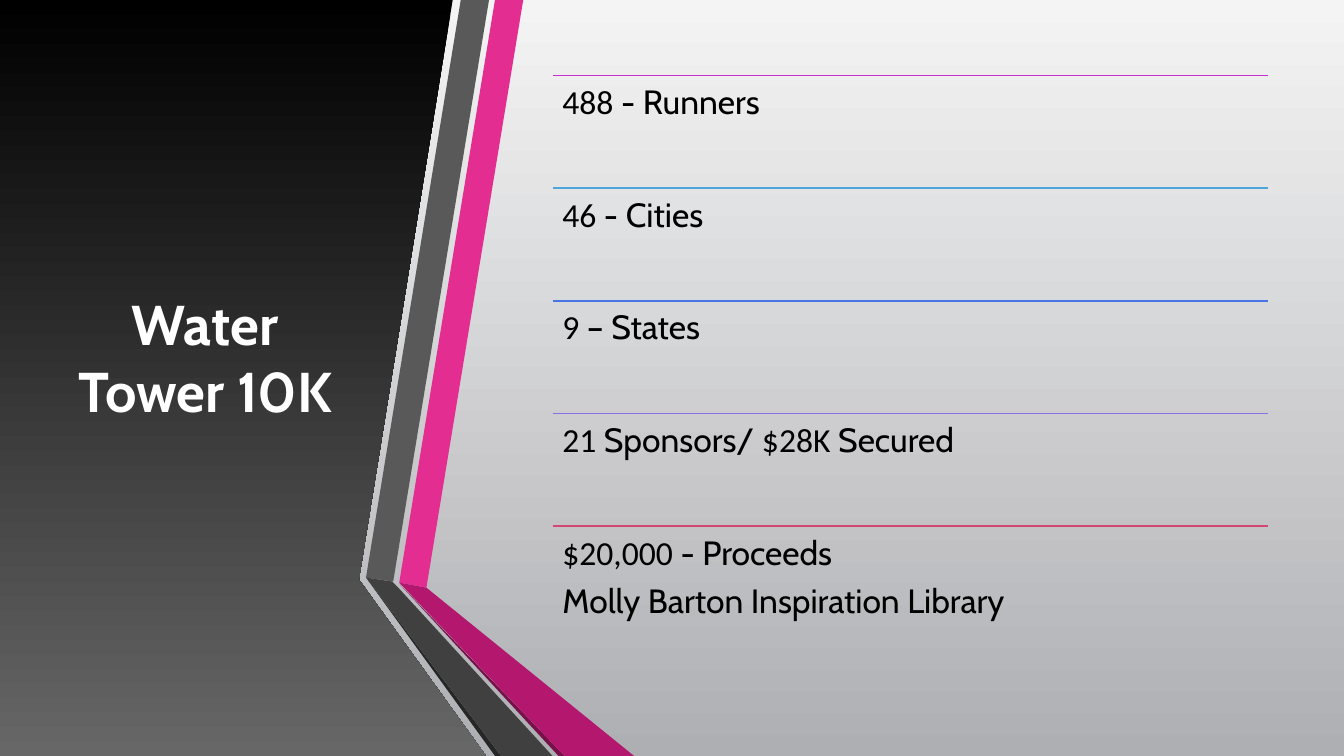
from lxml import etree
from pptx import Presentation
from pptx import util as u
from pptx.dml.color import RGBColor
from pptx.enum import shapes, text
from pptx.oxml.ns import qn


def paint(fill, *tones):
    if len(tones) == 1:
        fill.solid()
        fill.fore_color.rgb = RGBColor.from_string(tones[0])
        return
    fill.gradient()
    fill.gradient_angle = 270
    for stop, tone, place in zip(fill.gradient_stops, tones, (0, 1)):
        stop.color.rgb = RGBColor.from_string(tone)
        stop.position = place


def write(para, words, face, size, tone, bold=False):
    run = para.add_run()
    run.text = words
    form = {"name": face, "size": u.Pt(size), "bold": bold}
    for key, value in form.items():
        setattr(run.font, key, value)
    paint(run.font.fill, tone)


deck = Presentation()
deck.slide_width = u.Inches(13.33)
deck.slide_height = u.Inches(7.5)
slide = deck.slides.add_slide(deck.slide_layouts[6])
paint(slide.background.fill, "F4F4F5", "AEAFB2")

panel = [(0, 0), (4.49, 0), (3.56, 5.75), (4.82, 7.5), (0, 7.5)]
bands = [
    (panel, ["000000", "676767"]),
    ([(3.96, 5.78), (4.23, 5.83), (5.19, 0), (4.91, 0)], ["E32D91"]),
    ([(4.85, 0), (4.57, 0), (3.63, 5.73), (3.9, 5.77)], ["595959"]),
    ([(3.63, 5.73), (4.91, 7.5), (4.97, 7.5)], ["262626"]),
    ([(3.96, 5.79), (5.54, 7.5), (5.6, 7.5)], ["781049"]),
    ([(3.96, 5.78), (5.6, 7.5), (6.29, 7.5), (4.23, 5.83)], ["B4186E"]),
    ([(5.48, 7.5), (3.95, 5.83), (3.89, 5.77), (3.63, 5.73), (4.97, 7.5)],
     ["404040"]),
]
for points, tones in bands:
    spots = [(u.Inches(x), u.Inches(y)) for x, y in points]
    pen = slide.shapes.build_freeform(*spots[0])
    pen.add_line_segments(spots[1:], close=True)
    band = pen.convert_to_shape()
    band.shadow.inherit = False
    band.line.fill.background()
    paint(band.fill, *tones)

title = slide.shapes.add_textbox(
    u.Inches(0.59), u.Inches(0.75), u.Inches(2.89), u.Inches(5.58))
frame = title.text_frame
frame.word_wrap = True
frame.vertical_anchor = text.MSO_ANCHOR.MIDDLE
frame.paragraphs[0].alignment = text.PP_ALIGN.CENTER
write(frame.paragraphs[0], "Water Tower 10K", "Cabin", 40, "FFFFFF", True)

facts = [
    ("C830CC", [[("488", "Calibri"), (" - Runners", "Cabin")]]),
    ("4EA6DC", [[("46", "Calibri"), (" - Cities", "Cabin")]]),
    ("4775E7", [[("9", "Calibri"), (" – States", "Cabin")]]),
    ("8971E1", [[("21", "Calibri"), (" Sponsors/ ", "Cabin"),
                 ("$28K ", "Calibri"), ("Secured", "Cabin")]]),
    ("D54773", [[("$20,000 ", "Calibri"), ("- Proceeds", "Cabin")],
                [("Molly Barton Inspiration Library", "Cabin")]]),
]
left, wide = u.Inches(5.48), u.Inches(7.1)
step = (5.22 - 0.75) / 4
for row, (tone, lines) in enumerate(facts):
    top = u.Inches(0.75 + row * step)
    rule = slide.shapes.add_connector(
        shapes.MSO_CONNECTOR.STRAIGHT, left, top, left + wide, top)
    rule.line.width = u.Pt(1.25)
    paint(rule.line.fill, tone)
    etree.SubElement(rule._element.spPr, qn("a:effectLst"))

    box = slide.shapes.add_textbox(left, top, wide, u.Inches(step))
    frame = box.text_frame
    frame.word_wrap = True
    for side in ("left", "right", "top", "bottom"):
        setattr(frame, "margin_" + side, u.Inches(0.1))
    for count, line in enumerate(lines):
        para = frame.add_paragraph() if count else frame.paragraphs[0]
        para.line_spacing = 0.9
        para.space_after = u.Pt(8.4)
        for words, face in line:
            write(para, words, face, 24, "000000")

deck.save("out.pptx")
